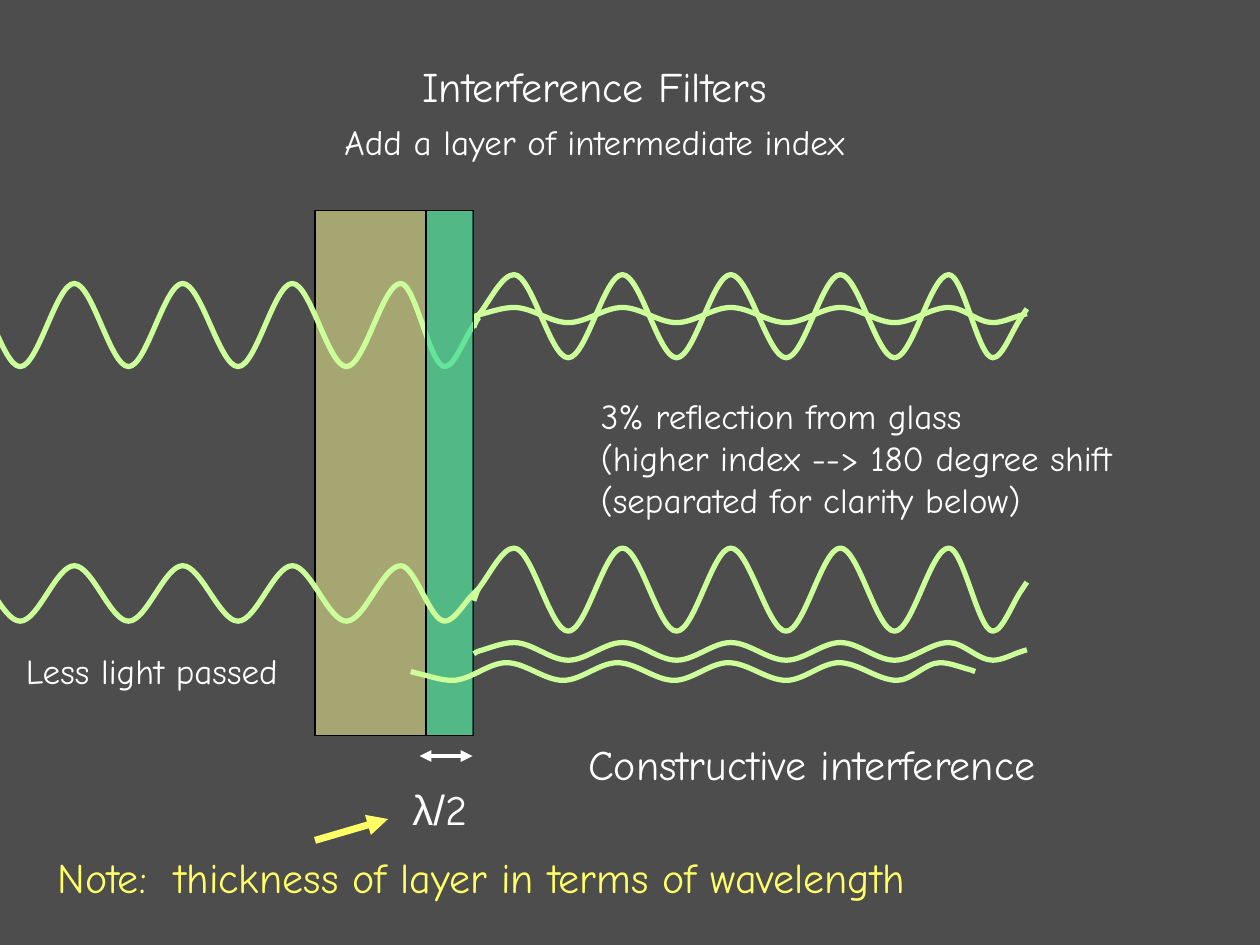
"""Build the slide on interference filters with an intermediate-index layer."""
from lxml import etree
from pptx import Presentation
from pptx.dml.color import RGBColor
from pptx.enum.shapes import MSO_CONNECTOR, MSO_SHAPE
from pptx.enum.text import MSO_ANCHOR, PP_ALIGN
from pptx.oxml.ns import qn
from pptx.util import Inches, Pt

WHITE = RGBColor(0xFF, 0xFF, 0xFF)
BLACK = RGBColor(0, 0, 0)
GREY = RGBColor(0x4D, 0x4D, 0x4D)
YELLOW = RGBColor(0xFF, 0xFF, 0x66)
GLASS_YELLOW = RGBColor(0xFF, 0xFF, 0x99)
LAYER_GREEN = RGBColor(0x00, 0xCC, 0x99)
LIGHT_GREEN = RGBColor(0xCC, 0xFF, 0x99)
FONT = "Comic Neue"

TITLE_LINES = [("Interference Filters", 24, 1.0), ("Add a layer of intermediate index", 20, 0.8)]
REFLECTION_LINES = ["3% reflection from glass", "(higher index --> 180 degree shift",
                    "(separated for clarity below)"]

INCIDENT = [(3.76, -0.27), (3.8, 0.03), (4.08, 1), (4.51, -1), (4.94, 1), (5.37, -1),
            (5.8, 1), (6.24, -1), (6.67, 1), (7.1, -1), (7.53, 1), (7.88, -1),
            (8.11, 0), (8.15, 0.18)]
REFLECTED = [(3.26, 0), (3.31, -0.2), (3.59, -1), (4.02, 1), (4.47, -1), (4.9, 1),
             (5.35, -1), (5.78, 1), (6.24, -1), (6.66, 1), (7.12, -1), (7.46, 1),
             (7.7, 0.2), (7.74, 0)]
PASSED_SHIFT = -4.35


def wave_slopes(points):
    """Return a slope for each point, level at every crest and trough."""
    def chord(a, b):
        return (b[1] - a[1]) / (b[0] - a[0])

    inner = [0 if (here[1] - before[1]) * (after[1] - here[1]) <= 0 else chord(before, after)
             for before, here, after in zip(points, points[1:], points[2:])]
    return [chord(*points[:2]), *inner, chord(*points[-2:])]


def smooth(wave):
    """Turn the straight segments of a freeform into cubic curves."""
    nodes = list(wave._element.iter(qn("a:pt")))
    points = [(int(node.get("x")), int(node.get("y"))) for node in nodes]
    slopes = wave_slopes(points)
    for i, node in enumerate(nodes[1:]):
        (x0, y0), (x1, y1) = points[i:i + 2]
        third = (x1 - x0) / 3
        curve = etree.Element(qn("a:cubicBezTo"))
        for x, y in ((x0 + third, y0 + third * slopes[i]),
                     (x1 - third, y1 - third * slopes[i + 1]), (x1, y1)):
            etree.SubElement(curve, qn("a:pt"), x=str(round(x)), y=str(round(y)))
        segment = node.getparent()
        segment.getparent().replace(segment, curve)


def add_wave(slide, knots, middle, height, shift=0):
    start, *rest = [(Inches(x + shift), Inches(middle - height * level)) for x, level in knots]
    builder = slide.shapes.build_freeform(*start)
    builder.add_line_segments(rest, close=False)
    wave = builder.convert_to_shape()
    smooth(wave)
    wave.shadow.inherit = False
    wave.fill.background()
    wave.line.color.rgb = LIGHT_GREEN
    wave.line.width = Pt(3)


def add_pane(slide, left, width, color):
    pane = slide.shapes.add_shape(MSO_SHAPE.RECTANGLE, Inches(left), Inches(1.67),
                                  Inches(width), Inches(4.17))
    pane.shadow.inherit = False
    pane.fill.solid()
    pane.fill.fore_color.rgb = color
    tint = pane._element.spPr.find(qn("a:solidFill")).find(qn("a:srgbClr"))
    etree.SubElement(tint, qn("a:alpha"), val="50000")
    pane.line.color.rgb = BLACK
    pane.line.width = Pt(0.75)


def style(paragraph, size, color=WHITE, align=None, before=0):
    paragraph.font.name = FONT
    paragraph.font.size = Pt(size)
    paragraph.font.color.rgb = color
    paragraph.alignment = align
    paragraph.space_before = Pt(before)


def add_text(slide, box, lines, size, color=WHITE, align=None, before=0,
             anchor=MSO_ANCHOR.MIDDLE, wrap=True):
    frame = slide.shapes.add_textbox(*map(Inches, box)).text_frame
    frame.word_wrap = wrap
    frame.vertical_anchor = anchor
    frame.text = "\n".join(lines)
    for paragraph in frame.paragraphs:
        style(paragraph, size, color, align, before)
    return frame


def add_arrow(slide, start, end, color, width, ends):
    arrow = slide.shapes.add_connector(MSO_CONNECTOR.STRAIGHT, *map(Inches, start + end))
    arrow.line.color.rgb = color
    arrow.line.width = Pt(width)
    outline = arrow._element.spPr.find(qn("a:ln"))
    for arrowhead in ends:
        etree.SubElement(outline, qn(arrowhead), type="triangle")
    etree.SubElement(arrow._element.spPr, qn("a:effectLst"))


def add_title(slide):
    title = slide.shapes.title
    title.left, title.top, title.width, title.height = map(Inches, (2.42, 0.35, 4.6, 1.07))
    frame = title.text_frame
    frame.word_wrap = False
    frame.vertical_anchor = MSO_ANCHOR.MIDDLE
    frame.text = "\n".join(line for line, _, _ in TITLE_LINES)
    for paragraph, (_, size, spacing) in zip(frame.paragraphs, TITLE_LINES):
        style(paragraph, size, align=PP_ALIGN.CENTER, before=size / 2)
        paragraph.line_spacing = spacing


def main():
    deck = Presentation()
    deck.slide_width, deck.slide_height = Inches(10), Inches(7.5)
    slide = deck.slides.add_slide(deck.slide_layouts[5])
    slide.background.fill.solid()
    slide.background.fill.fore_color.rgb = GREY

    add_title(slide)
    add_wave(slide, INCIDENT, 2.5, 0.06)
    add_pane(slide, 2.5, 1.25, GLASS_YELLOW)
    add_text(slide, (4.67, 3, 5.25, 1.26), REFLECTION_LINES, 20)
    add_wave(slide, INCIDENT, 2.51, 0.33)
    add_wave(slide, INCIDENT, 2.58, 0.33, PASSED_SHIFT)
    add_pane(slide, 3.38, 0.38, LAYER_GREEN)
    add_wave(slide, REFLECTED, 5.33, 0.07)
    add_wave(slide, INCIDENT, 4.68, 0.33)
    add_wave(slide, INCIDENT, 4.71, 0.22, PASSED_SHIFT)
    add_wave(slide, INCIDENT, 5.17, 0.07)

    add_text(slide, (4.57, 5.81, 4.26, 0.98), ["Constructive interference"], 24,
             before=12, anchor=MSO_ANCHOR.TOP)
    add_text(slide, (0, 5.08, 2.41, 0.49), ["Less light passed"], 20,
             align=PP_ALIGN.CENTER, before=10, wrap=False)
    add_arrow(slide, (3.33, 6), (3.75, 6), WHITE, 2.25, ["a:headEnd", "a:tailEnd"])
    thickness = add_text(slide, (3.15, 6.16, 0.68, 0.51), ["λ/"], 24,
                         align=PP_ALIGN.CENTER, wrap=False).paragraphs[0]
    thickness.runs[0].font.name = "Arial"
    thickness.add_run().text = "2"
    add_arrow(slide, (2.5, 6.67), (3.08, 6.5), YELLOW, 4, ["a:tailEnd"])
    add_text(slide, (0.36, 6.67, 7.72, 0.57),
             ["Note:  thickness of layer in terms of wavelength"], 24, YELLOW, wrap=False)
    deck.save("out.pptx")


if __name__ == "__main__":
    main()
